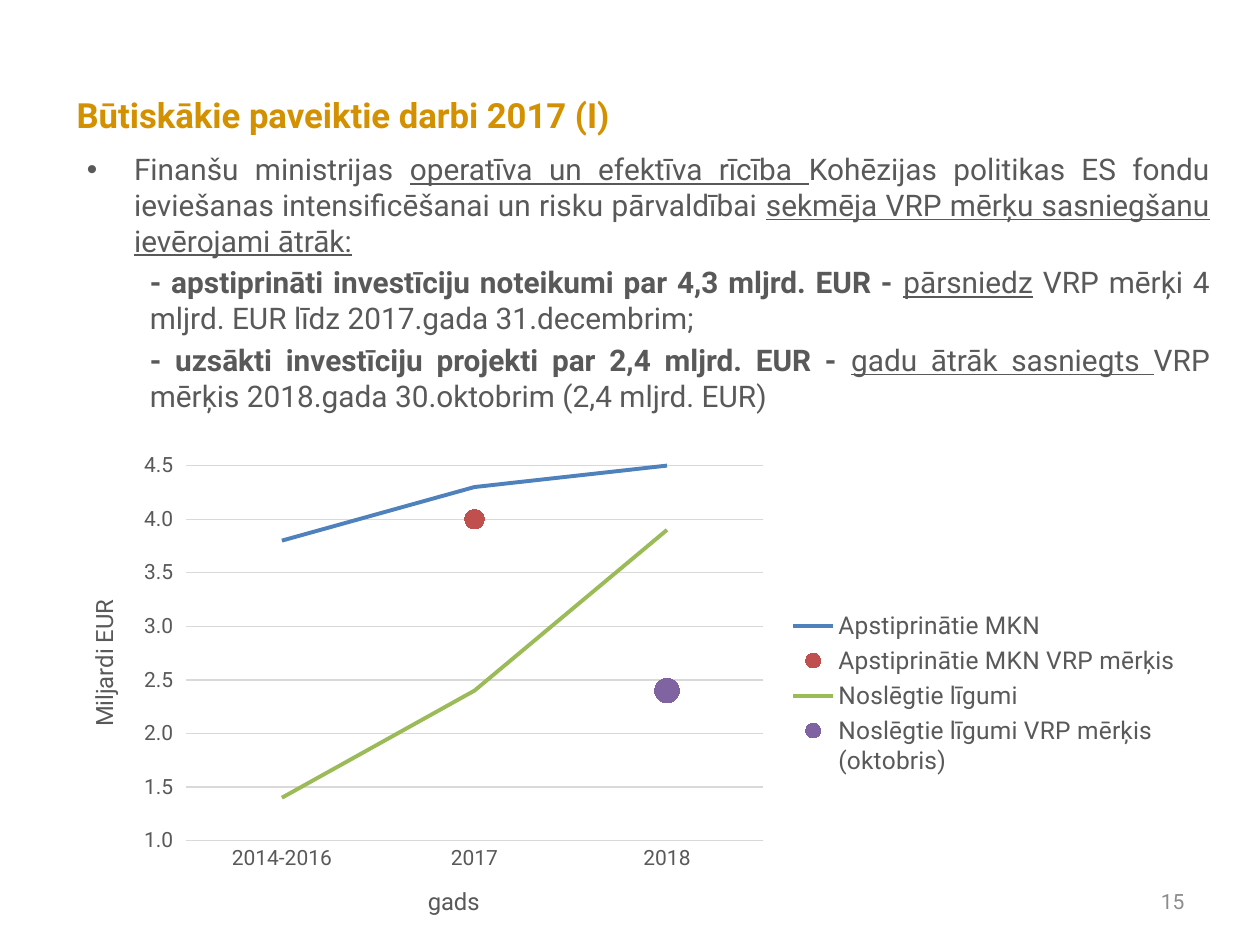
"""Builds the slide on key work done in 2017, with a progress and targets chart."""
from dataclasses import dataclass

import lxml.etree
import pptx
import pptx.chart.data
import pptx.dml.color
import pptx.enum.chart
import pptx.enum.text
import pptx.oxml
import pptx.oxml.ns
import pptx.util

Pt = pptx.util.Pt
RGB = pptx.dml.color.RGBColor.from_string
qn = pptx.oxml.ns.qn
ALIGN = pptx.enum.text.PP_ALIGN
ANCHOR = pptx.enum.text.MSO_ANCHOR


@dataclass(frozen=True)
class Theme:
    font: str = "Roboto"
    heading: str = "D39001"
    text: str = "595959"
    page: str = "8C8C8C"
    grid: str = "D9D9D9"
    approved: str = "4F81BD"
    approved_target: str = "C0504D"
    contracts: str = "9BBB59"
    contracts_target: str = "8064A2"
    heading_size: float = 19.8
    body_size: float = 17
    legend_size: float = 14
    axis_title_size: float = 13.6
    small_size: float = 12


theme = Theme()


def add_text(slide, box, paragraphs, size, color, align, anchor):
    frame = slide.shapes.add_textbox(*map(Pt, box)).text_frame
    frame.word_wrap = True
    frame.vertical_anchor = anchor
    for index, pieces in enumerate(paragraphs):
        paragraph = frame.add_paragraph() if index else frame.paragraphs[0]
        paragraph.alignment = align
        for words, style in pieces:
            run = paragraph.add_run()
            run.text = words
            run.font.name, run.font.size = theme.font, Pt(size)
            run.font.color.rgb = RGB(color)
            run.font.bold = "b" in style
            run.font.underline = "u" in style
    return frame


def place(element, **fractions):
    layout = element.find(qn("c:layout"))
    if layout is None:
        layout = pptx.oxml.parse_xml(f'<c:layout {pptx.oxml.ns.nsdecls("c")}/>')
        overlay = element.find(qn("c:overlay"))
        element.insert(0 if overlay is None else element.index(overlay), layout)
    manual = lxml.etree.SubElement(layout, qn("c:manualLayout"))
    if element.tag == qn("c:plotArea"):
        lxml.etree.SubElement(manual, qn("c:layoutTarget")).set("val", "inner")
    for side in "xy":
        lxml.etree.SubElement(manual, qn(f"c:{side}Mode")).set("val", "edge")
    for side, fraction in fractions.items():
        lxml.etree.SubElement(manual, qn(f"c:{side}")).set("val", str(fraction))


deck = pptx.Presentation()
deck.slide_width, deck.slide_height = Pt(720), Pt(540)
slide = deck.slides.add_slide(deck.slide_layouts[6])

add_text(slide, (516.2, 500.4, 167.8, 28.8), [[("15", "")]],
         theme.small_size, theme.page, ALIGN.RIGHT, ANCHOR.MIDDLE)

achievements = [
    [("Finanšu ministrijas ", ""),
     ("operatīva un efektīva rīcība ", "u"),
     ("Kohēzijas politikas ES fondu ieviešanas intensificēšanai un risku pārvaldībai ", ""),
     ("sekmēja VRP mērķu sasniegšanu ievērojami ātrāk:", "u")],
    [("- apstiprināti investīciju noteikumi par 4,3 mljrd. EUR - ", "b"),
     ("pārsniedz", "u"),
     (" ", "b"),
     ("VRP mērķi 4 mljrd. EUR līdz 2017.gada 31.decembrim;", "")],
    [("- uzsākti investīciju projekti par 2,4 mljrd. EUR - ", "b"),
     ("gadu ātrāk sasniegts ", "u"),
     ("VRP mērķis 2018.gada 30.oktobrim (2,4 mljrd. EUR)", "")],
]
body = add_text(slide, (42.5, 82.8, 655.9, 442), achievements,
                theme.body_size, theme.text, ALIGN.JUSTIFY, ANCHOR.TOP)
lead, *details = body.paragraphs
lead_properties = lead._p.get_or_add_pPr()
lead_properties.set("marL", str(Pt(27)))
lead_properties.set("indent", str(Pt(-27)))
lead_properties.append(pptx.oxml.parse_xml(
    f'<a:buFont {pptx.oxml.ns.nsdecls("a")} typeface="Arial"/>'))
lead_properties.append(pptx.oxml.parse_xml(
    f'<a:buChar {pptx.oxml.ns.nsdecls("a")} char="•"/>'))
for detail in details:
    detail.level = 1
    detail.space_before = Pt(3.4)
    detail._p.get_or_add_pPr().set("marL", str(Pt(36)))
    detail._p.get_or_add_pPr().set("indent", "0")

progress = pptx.chart.data.CategoryChartData(number_format="0.0")
progress.categories = ["2014-2016", "2017", "2018"]
series_rows = [
    ("Apstiprinātie MKN", (3.8, 4.3, 4.5), theme.approved, None),
    ("Apstiprinātie MKN VRP mērķis", (None, 4, None), theme.approved_target, 11),
    ("Noslēgtie līgumi", (1.4, 2.4, 3.9), theme.contracts, None),
    ("Noslēgtie līgumi VRP mērķis (oktobris)", (None, None, 2.4), theme.contracts_target, 14),
]
for name, values, *_ in series_rows:
    progress.add_series(name, values)
chart = slide.shapes.add_chart(pptx.enum.chart.XL_CHART_TYPE.LINE_MARKERS, Pt(34.9), Pt(251.8),
                               Pt(647.3), Pt(285.8), progress).chart
chart.has_title = False
chart.font.name, chart.font.size = theme.font, Pt(theme.small_size)
chart.font.color.rgb = RGB(theme.text)
chart.plots[0].vary_by_categories = False
for series, (_, _, color, marker_size) in zip(chart.plots[0].series, series_rows):
    series.smooth = False
    if marker_size:
        series.format.line.fill.background()
        series.marker.style = pptx.enum.chart.XL_MARKER_STYLE.CIRCLE
        series.marker.size = marker_size
        series.marker.format.fill.solid()
        series.marker.format.fill.fore_color.rgb = RGB(color)
        series.marker.format.line.color.rgb = RGB(color)
    else:
        series.marker.style = pptx.enum.chart.XL_MARKER_STYLE.NONE
        series.format.line.width = Pt(2.25)
        series.format.line.color.rgb = RGB(color)

years, billions = chart.category_axis, chart.value_axis
for axis, caption, left, top in ((years, "gads", 0.32, 0.88),
                                 (billions, "Miljardi EUR", 0.02, 0.31)):
    title_run = axis.axis_title.text_frame.paragraphs[0].add_run()
    title_run.text = caption
    title_run.font.name, title_run.font.size = theme.font, Pt(theme.axis_title_size)
    title_run.font.bold = False
    title_run.font.color.rgb = RGB(theme.text)
    place(axis.axis_title._element, x=left, y=top)
    axis.tick_labels.font.name = theme.font
    axis.tick_labels.font.size = Pt(theme.small_size)
    axis.tick_labels.font.color.rgb = RGB(theme.text)
years.major_tick_mark = pptx.enum.chart.XL_TICK_MARK.NONE
billions.minimum_scale, billions.maximum_scale, billions.major_unit = 1, 4.5, 0.5
billions.tick_labels.number_format = "0.0"
billions.tick_labels.number_format_is_linked = False
billions.format.line.fill.background()
for rule in (years.format.line, billions.major_gridlines.format.line):
    rule.width = Pt(0.75)
    rule.color.rgb = RGB(theme.grid)

chart.has_legend = True
chart.legend.position = pptx.enum.chart.XL_LEGEND_POSITION.RIGHT
chart.legend.include_in_layout = False
chart.legend.font.name, chart.legend.font.size = theme.font, Pt(theme.legend_size)
chart.legend.font.color.rgb = RGB(theme.text)
place(chart.legend._element, x=0.64, y=0.33, w=0.35, h=0.35)
place(chart._chartSpace.find(".//" + qn("c:plotArea")), x=0.11, y=0.05, w=0.51, h=0.75)

add_text(slide, (36.7, 49, 447.8, 33.1), [[("Būtiskākie paveiktie darbi 2017 (I)", "b")]],
         theme.heading_size, theme.heading, ALIGN.LEFT, ANCHOR.MIDDLE)

deck.save("out.pptx")
